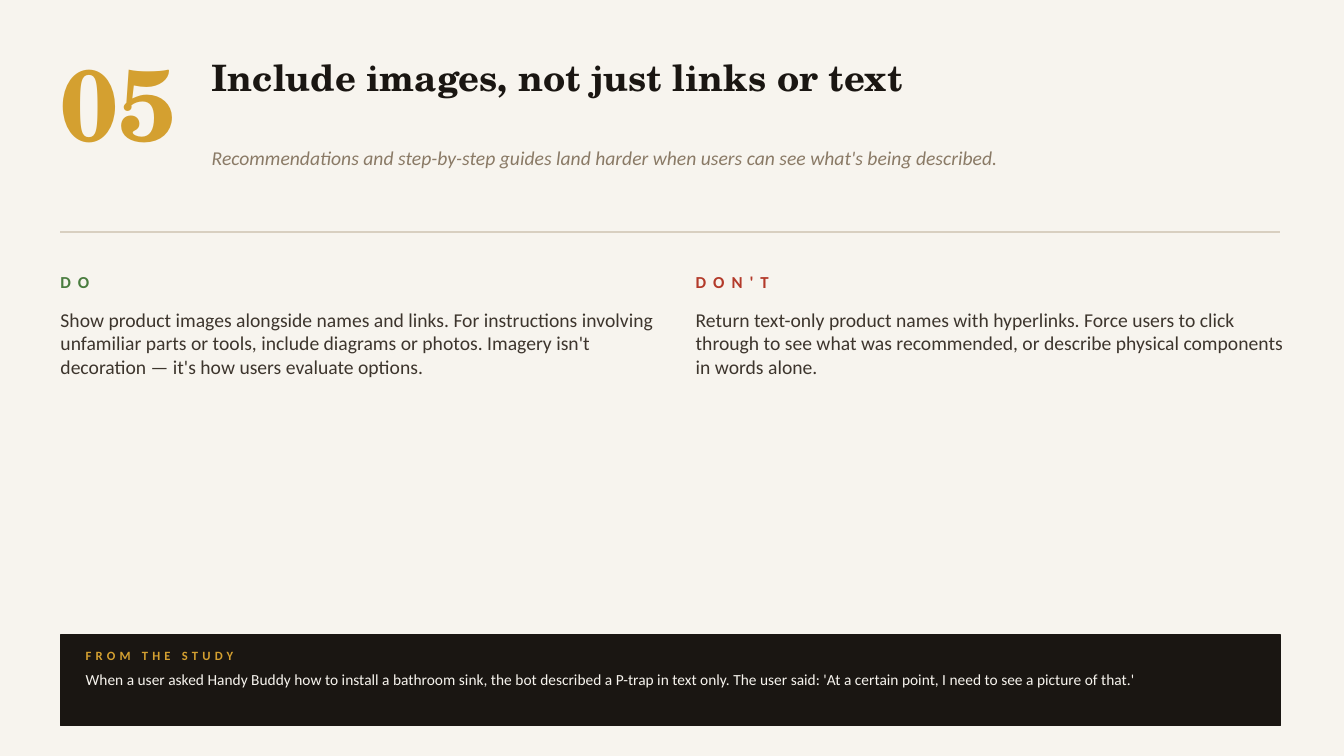
from lxml.etree import SubElement
from pptx import Presentation
from pptx.dml.color import RGBColor
from pptx.enum.shapes import MSO_CONNECTOR, MSO_SHAPE
from pptx.enum.text import MSO_ANCHOR, MSO_AUTO_SIZE, PP_ALIGN
from pptx.oxml.ns import qn
from pptx.util import Emu, Pt

CREAM = RGBColor(0xF7, 0xF4, 0xEE)
GOLD = RGBColor(0xD4, 0xA0, 0x30)
INK = RGBColor(0x1A, 0x16, 0x12)
TAUPE = RGBColor(0x8A, 0x7A, 0x66)
SAND = RGBColor(0xD8, 0xCF, 0xC0)
BROWN = RGBColor(0x3D, 0x35, 0x2D)
GREEN = RGBColor(0x4A, 0x7D, 0x3F)
RED = RGBColor(0xB3, 0x3A, 0x2A)

SERIF = "TeX Gyre Schola"
SANS = "Calibri"
SCALE = 9144  # EMU in one px, 100 px to the inch


def px(*sizes):
    return [Emu(size * SCALE) for size in sizes]


class Page:
    def __init__(self, deck):
        self.slide = deck.slides.add_slide(deck.slide_layouts[5])
        self.shapes = self.slide.shapes
        fill = self.slide.background.fill
        fill.solid()
        fill.fore_color.rgb = CREAM

    def style(self, shape, text, size, color, face=SANS, bold=False,
              italic=False, track=0, after=None, anchor=MSO_ANCHOR.TOP):
        frame = shape.text_frame
        frame.text = text
        frame.word_wrap = True
        frame.auto_size = MSO_AUTO_SIZE.NONE
        frame.vertical_anchor = anchor
        frame.margin_left = frame.margin_right = 0
        frame.margin_top = frame.margin_bottom = 0
        para = frame.paragraphs[0]
        para.alignment = PP_ALIGN.LEFT
        if after:
            para.space_after = Pt(after)
        run = para.runs[0]
        font = run.font
        font.name, font.size = face, Pt(size)
        font.bold, font.italic = bold, italic
        font.color.rgb = color
        if track:
            run._r.get_or_add_rPr().set("spc", str(track * 100))

    def title(self, box, text, size, color, **look):
        shape = self.shapes.title
        shape.left, shape.top, shape.width, shape.height = px(*box)
        self.style(shape, text, size, color, **look)

    def text(self, box, text, size, color, **look):
        self.style(self.shapes.add_textbox(*px(*box)), text, size, color, **look)

    def label(self, box, text, size, color, track):
        self.text(box, text, size, color, bold=True, track=track,
                  anchor=MSO_ANCHOR.MIDDLE)

    def rule(self, left, right, top, color):
        line = self.shapes.add_connector(
            MSO_CONNECTOR.STRAIGHT, *px(left, top, right, top))
        line.line.color.rgb = color
        line.line.width = Pt(1)
        SubElement(line._element.spPr, qn("a:effectLst"))

    def panel(self, box, color):
        shape = self.shapes.add_shape(MSO_SHAPE.RECTANGLE, *px(*box))
        shape.shadow.inherit = False
        shape.fill.solid()
        shape.fill.fore_color.rgb = color
        shape.line.color.rgb = color
        shape.line.width = Pt(1)


def main():
    deck = Presentation()
    deck.slide_width, deck.slide_height = px(1333, 750)
    page = Page(deck)

    # Heading
    page.text((60, 40, 150, 120), "05", 72, GOLD, face=SERIF, bold=True)
    page.title((210, 55, 1060, 110), "Include images, not just links or text",
               26, INK, face=SERIF, bold=True)
    page.text((210, 145, 1060, 60),
              "Recommendations and step-by-step guides land harder when users "
              "can see what's being described.", 14, TAUPE, italic=True)
    page.rule(60, 1270, 230, SAND)

    # Do and don't columns
    advice = [
        ("DO", GREEN,
         "Show product images alongside names and links. For instructions "
         "involving unfamiliar parts or tools, include diagrams or photos. "
         "Imagery isn't decoration — it's how users evaluate options."),
        ("DON'T", RED,
         "Return text-only product names with hyperlinks. Force users to "
         "click through to see what was recommended, or describe physical "
         "components in words alone."),
    ]
    for col, (head, color, body) in enumerate(advice):
        left = 60 + col * 630
        page.label((left, 260, 600, 40), head, 12, color, track=5)
        page.text((left, 305, 600, 310), body, 14, BROWN, after=8)

    # Study panel
    page.panel((60, 630, 1210, 90), INK)
    page.label((85, 638, 250, 25), "FROM THE STUDY", 9, GOLD, track=3)
    page.text((85, 665, 1160, 50),
              "When a user asked Handy Buddy how to install a bathroom sink, "
              "the bot described a P-trap in text only. The user said: 'At a "
              "certain point, I need to see a picture of that.'", 11, CREAM)

    deck.save("out.pptx")


if __name__ == "__main__":
    main()
